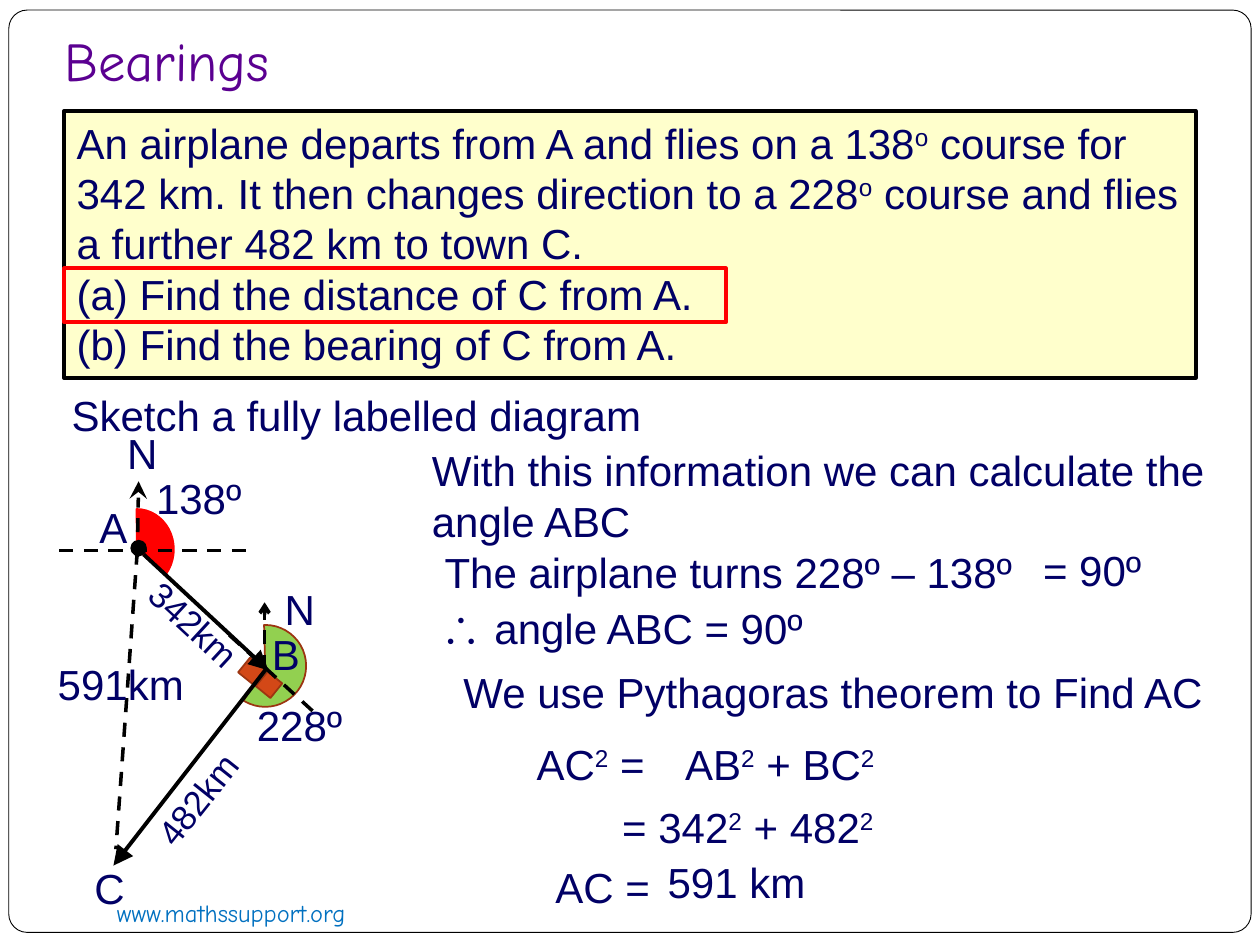
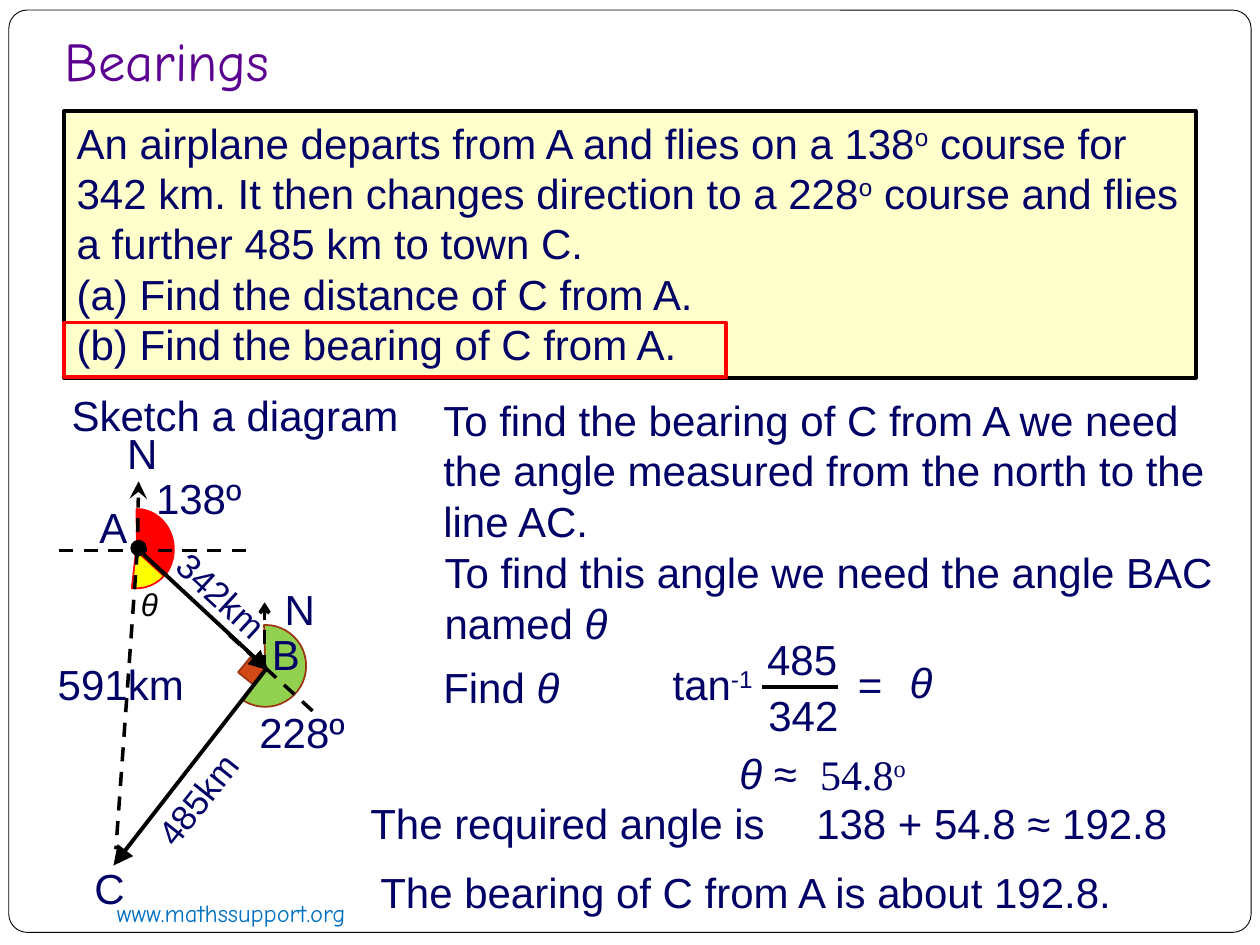
from lxml import etree
from pptx import Presentation
from pptx.dml.color import RGBColor
from pptx.enum.dml import MSO_LINE
from pptx.enum.shapes import MSO_CONNECTOR, MSO_SHAPE
from pptx.enum.text import MSO_ANCHOR, MSO_AUTO_SIZE, PP_ALIGN
from pptx.oxml.ns import qn
from pptx.util import Cm, Pt

STRAIGHT = MSO_CONNECTOR.STRAIGHT
DASH = MSO_LINE.DASH
RECTANGLE = MSO_SHAPE.RECTANGLE
ROUNDED = MSO_SHAPE.ROUNDED_RECTANGLE
OVAL = MSO_SHAPE.OVAL
PIE = MSO_SHAPE.PIE
TOP = MSO_ANCHOR.TOP
BOTTOM = MSO_ANCHOR.BOTTOM
LEFT = PP_ALIGN.LEFT
FIT_SHAPE = MSO_AUTO_SIZE.SHAPE_TO_FIT_TEXT
NO_FIT = MSO_AUTO_SIZE.NONE

TITLE_ONLY = 5
CM_PER_INCH = 2.54
BODY_FONT = "Arial"
HAND_FONT = "Comic Neue"
SERIF_FONT = "Times New Roman"
BODY_SIZE = 24
SIDE_SIZE = 20

BLACK = "000000"
WHITE = "FFFFFF"
NAVY = "010066"
PURPLE = "5B0091"
BLUE = "0070C0"
CREAM = "FFFFCC"
RED = "FF0000"
YELLOW = "FFFF00"
GREEN = "92D050"
ORANGE = "D34817"
RUST = "9C3511"

PROBLEM_LEFT = 0.51
HIGHLIGHT_TOP = 2.13
HIGHLIGHT_HEIGHT = 0.43


def color(hex_string):
    return RGBColor.from_string(hex_string)


def inches(*values):
    return [Cm(value * CM_PER_INCH) for value in values]


def format_font(font, size, hex_string, name):
    font.size = Pt(size)
    font.name = name
    font.color.rgb = color(hex_string)


def fill_paragraph(paragraph, text, size, hex_string, name):
    """Text between ^ marks is raised; text between _ marks is italic."""
    for raised, part in enumerate(text.split("^")):
        for slanted, piece in enumerate(part.split("_")):
            if not piece:
                continue
            run = paragraph.add_run()
            run.text = piece
            format_font(run.font, size, hex_string, name)
            if raised % 2:
                run._r.get_or_add_rPr().set("baseline", "30000")
            if slanted % 2:
                run.font.italic = True


def add_text(slide, text, left, top, width, height=0.5, wrap=False, rotation=0,
             size=BODY_SIZE, hex_string=NAVY, name=BODY_FONT):
    box = slide.shapes.add_textbox(*inches(left, top, width, height))
    box.rotation = rotation
    box.text_frame.word_wrap = wrap
    box.text_frame.auto_size = FIT_SHAPE
    fill_paragraph(box.text_frame.paragraphs[0], text, size, hex_string, name)
    return box


def add_outlined(slide, kind, at, fill, line, line_width, rotation=0):
    shape = slide.shapes.add_shape(kind, *inches(*at))
    shape.shadow.inherit = False
    shape.rotation = rotation
    if fill:
        shape.fill.solid()
        shape.fill.fore_color.rgb = color(fill)
    else:
        shape.fill.background()
    shape.line.color.rgb = color(line)
    shape.line.width = Pt(line_width)
    return shape


def add_sector(slide, at, start, end, fill, line):
    sector = add_outlined(slide, PIE, at, fill, line, 1)
    for index, degrees in enumerate((start, end)):
        sector.adjustments[index] = degrees * 0.6


def add_right_angle(slide, left, top):
    add_outlined(slide, RECTANGLE, (left, top, 0.15, 0.15), ORANGE, RUST, 1, 39)


def add_line(slide, start, end, width=2.25, dashed=False, arrow=None, arrow_size="lg"):
    connector = slide.shapes.add_connector(STRAIGHT, *inches(*start, *end))
    connector.line.color.rgb = color(BLACK)
    connector.line.width = Pt(width)
    if dashed:
        connector.line.dash_style = DASH
    properties = connector._element.spPr
    if arrow:
        etree.SubElement(properties.find(qn("a:ln")), qn("a:tailEnd"),
                         type=arrow, w=arrow_size, len=arrow_size)
    etree.SubElement(properties, qn("a:effectLst"))


def add_dashed(slide, start, end, arrow=None, arrow_size="lg"):
    add_line(slide, start, end, 2, True, arrow, arrow_size)


def move_frame_to_layout(slide):
    frame = add_outlined(slide, ROUNDED, (0.07, 0.08, 9.86, 7.32), WHITE, BLACK, 0.5)
    frame.adjustments[0] = 0.02
    website = add_text(slide, "www.mathssupport.org", 0.83, 7.08, 3.25, 0.34, True,
                       size=14, hex_string=BLUE, name=HAND_FONT)
    for shape in (frame, website):
        slide.slide_layout.shapes._spTree.append(shape._element)


def set_title(slide, text):
    title = slide.shapes.title
    title.left, title.top, title.width, title.height = inches(0.51, 0.2, 8.5, 0.53)
    frame = title.text_frame
    frame.text = text
    frame.word_wrap = True
    frame.auto_size = NO_FIT
    frame.vertical_anchor = BOTTOM
    frame.margin_left, frame.margin_top, frame.margin_right, frame.margin_bottom = inches(0, 0.05, 0, 0)
    paragraph = frame.paragraphs[0]
    paragraph.alignment = LEFT
    format_font(paragraph.runs[0].font, 31.2, PURPLE, HAND_FONT)


def add_problem(slide, second_leg):
    box = add_outlined(slide, RECTANGLE, (PROBLEM_LEFT, 0.88, 8.98, 2.12), CREAM, BLACK, 2.25)
    frame = box.text_frame
    frame.word_wrap = True
    frame.auto_size = FIT_SHAPE
    frame.vertical_anchor = TOP
    lines = [
        "An airplane departs from A and flies on a 138^o^ course for 342 km. "
        "It then changes direction to a 228^o^ course and flies "
        f"a further {second_leg} km to town C.",
        "(a) Find the distance of C from A.",
        "(b) Find the bearing of C from A.",
    ]
    for index, line in enumerate(lines):
        paragraph = frame.add_paragraph() if index else frame.paragraphs[0]
        paragraph.alignment = LEFT
        fill_paragraph(paragraph, line, BODY_SIZE, NAVY, BODY_FONT)


def add_highlight(slide, question):
    top = HIGHLIGHT_TOP + question * HIGHLIGHT_HEIGHT
    add_outlined(slide, RECTANGLE, (PROBLEM_LEFT, top, 5.25, HIGHLIGHT_HEIGHT), None, RED, 2.25)


def add_angles(slide):
    add_sector(slide, (1.78, 4.96, 0.65, 0.65), 268.43, 121.89, GREEN, RUST)
    add_sector(slide, (0.79, 4.04, 0.59, 0.64), 269.82, 39.79, RED, RED)
    add_right_angle(slide, 1.92, 5.25)


def add_journey(slide, second_leg, first_leg_at, turn_at):
    add_dashed(slide, (2.1, 5.31), (2.1, 4.78), "arrow", "med")
    add_outlined(slide, OVAL, (1.04, 4.29, 0.12, 0.12), BLACK, BLACK, 0.75)
    add_line(slide, (1.14, 4.4), (2.13, 5.32), arrow="triangle")
    add_line(slide, (2.12, 5.3), (0.9, 6.87), arrow="triangle")
    add_dashed(slide, (1.09, 4.37), (0.92, 6.74))
    add_dashed(slide, (0.47, 4.37), (1.97, 4.37))
    add_dashed(slide, (1.09, 4.42), (1.1, 3.82), "stealth")
    add_dashed(slide, (1.82, 5.04), (2.5, 5.66))
    labels = [
        ("A", 0.69, 3.93, 0.43),
        ("B", 2.06, 4.94, 0.42),
        ("C", 0.65, 6.8, 0.44),
        ("N", 0.91, 3.34, 0.45),
        ("N", 2.16, 4.58, 0.45),
        ("138º", 1.14, 3.7, 0.89),
        ("228º", *turn_at, 0.89),
        ("591km", 0.36, 5.18, 1.21),
    ]
    for label in labels:
        add_text(slide, *label)
    add_text(slide, "342km", *first_leg_at, 1.04, 0.44, rotation=42.7, size=SIDE_SIZE)
    add_text(slide, f"{second_leg}km", 1.05, 6.12, 1.04, 0.44, rotation=308.5, size=SIDE_SIZE)


def build_distance(slide):
    second_leg = 482
    set_title(slide, "Bearings")
    add_angles(slide)
    add_right_angle(slide, 2.06, 5.36)
    add_problem(slide, second_leg)
    add_journey(slide, second_leg, (1.02, 4.74), (1.94, 5.5))
    add_highlight(slide, 0)
    explanations = [
        ("Sketch a fully labelled diagram", 0.47, 3.04, 9.06),
        ("With this information we can calculate the angle ABC", 3.33, 3.48, 6.6, 0.91),
        ("The airplane turns 228º – 138º", 3.43, 4.29, 4.95),
        ("∴ angle ABC = 90º", 3.4, 4.73, 3.89),
        ("We use Pythagoras theorem to Find AC", 3.58, 5.24, 6.35),
    ]
    for explanation in explanations:
        add_text(slide, *explanation, wrap=True)
    workings = [
        ("= 90º", 8.18, 4.27, 0.99),
        ("AC^2^ =", 4.16, 5.81, 1.08),
        ("AB^2^ + BC^2^", 5.34, 5.81, 1.84),
        ("= 342^2^ + 482^2^", 4.84, 6.31, 2.34),
        ("AC =", 4.31, 6.79, 0.96),
        ("591 km", 5.2, 6.75, 1.31),
    ]
    for working in workings:
        add_text(slide, *working)


def build_bearing(slide):
    second_leg = 485
    set_title(slide, "Bearings")
    add_sector(slide, (0.78, 4.07, 0.6, 0.6), 42.45, 96.42, YELLOW, RED)
    add_angles(slide)
    add_problem(slide, second_leg)
    add_journey(slide, second_leg, (1.24, 4.51), (1.96, 5.56))
    add_highlight(slide, 1)
    add_text(slide, "_θ_", 1.02, 4.59, 0.33, 0.4, size=18, hex_string=BLACK)
    explanations = [
        ("Sketch a diagram", 0.47, 3.04, 3.08),
        ("To find the bearing of C from A we need the angle measured "
         "from the north to the line AC.", 3.42, 3.08, 6.52, 1.31),
        ("To find this angle we need the angle BAC named _θ_", 3.43, 4.29, 6.52, 0.91),
        ("Find _θ_", 3.42, 5.2, 1.47),
        ("tan^-1^", 5.24, 5.18, 1),
    ]
    for explanation in explanations:
        add_text(slide, *explanation, wrap=True)
    workings = [
        ("485", 5.99, 4.98, 0.76),
        ("342", 6, 5.42, 0.76),
        ("=", 6.71, 5.18, 0.39),
        ("_θ_", 7.12, 5.16, 0.38),
        ("_θ_ ≈", 5.77, 5.88, 0.67),
        ("The required angle is", 2.84, 6.28, 3.48),
        ("138 + 54.8 ≈ 192.8", 6.38, 6.28, 3.11),
        ("The bearing of C from A is about 192.8.", 2.92, 6.83, 6.15),
    ]
    for working in workings:
        add_text(slide, *working)
    add_line(slide, (6.05, 5.45), (6.65, 5.45))
    add_text(slide, "54.8^o^", 6.41, 5.89, 0.99, name=SERIF_FONT)


def main():
    presentation = Presentation()
    presentation.slide_width, presentation.slide_height = inches(10, 7.5)
    layout = presentation.slide_layouts[TITLE_ONLY]
    distance_slide = presentation.slides.add_slide(layout)
    bearing_slide = presentation.slides.add_slide(layout)
    move_frame_to_layout(distance_slide)
    build_distance(distance_slide)
    build_bearing(bearing_slide)
    presentation.save("out.pptx")


if __name__ == "__main__":
    main()
